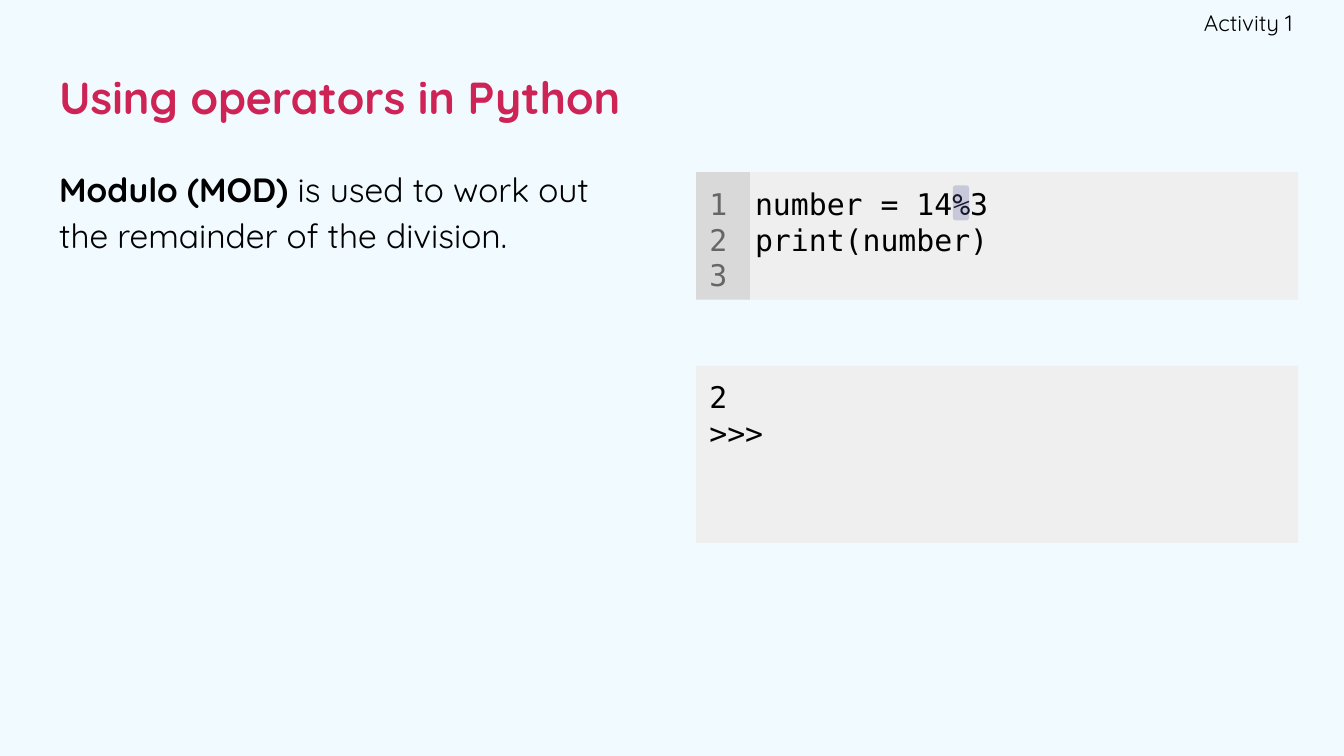
from dataclasses import dataclass

from lxml.etree import SubElement
from pptx import Presentation
from pptx.dml.color import RGBColor
from pptx.enum.shapes import MSO_SHAPE as Shape
from pptx.enum.text import MSO_ANCHOR as Anchor, MSO_AUTO_SIZE as AutoSize, PP_ALIGN as Align
from pptx.oxml.ns import qn
from pptx.util import Inches, Pt


@dataclass(frozen=True)
class Theme:
    page: str = "F1FAFF"
    heading: str = "CD2355"
    ink: str = "000000"
    panel: str = "EFEFEF"
    gutter: str = "D9D9D9"
    line_number: str = "666666"
    marker: str = "5B5BA5"
    marker_alpha: int = 26000
    text_font: str = "Quicksand"
    code_font: str = "DejaVu Sans Mono"
    title_size: int = 24
    body_size: int = 18
    code_size: int = 16
    label_size: int = 12


THEME = Theme()


def apply(target, values):
    for name, value in values.items():
        setattr(target, name, value)


def place(item, box):
    names = ("left", "top", "width", "height")
    apply(item, {name: Inches(value) for name, value in zip(names, box)})


def write(item, lines, font, size, color, anchor=Anchor.TOP, align=Align.LEFT, spacing=1.0, right=0.1):
    frame = item.text_frame
    apply(frame, {
        "word_wrap": True, "auto_size": AutoSize.NONE, "vertical_anchor": anchor,
        "margin_left": Inches(0.1), "margin_top": Inches(0.1),
        "margin_right": Inches(right), "margin_bottom": Inches(0.1),
    })
    for index, spans in enumerate(lines):
        para = frame.add_paragraph() if index else frame.paragraphs[0]
        apply(para, {"alignment": align, "line_spacing": spacing, "space_before": Pt(0)})
        for text, bold in spans:
            span = para.add_run()
            span.text = text
            apply(span.font, {"name": font, "size": Pt(size), "bold": bold})
            span.font.color.rgb = RGBColor.from_string(color)


def add_block(page, box, fill, shape=Shape.RECTANGLE):
    block = page.shapes.add_shape(shape, *map(Inches, box))
    block.shadow.inherit = False
    block.fill.solid()
    block.fill.fore_color.rgb = RGBColor.from_string(fill)
    block.line.fill.background()
    return block


def add_code(page, box, lines, fill=THEME.panel, color=THEME.ink):
    block = add_block(page, box, fill)
    write(block, [[(line, False)] for line in lines], THEME.code_font, THEME.code_size, color)


def add_heading(page, box):
    place(page.shapes.title, box)
    write(page.shapes.title, [[("Using operators in Python", True)]],
          THEME.text_font, THEME.title_size, THEME.heading, Anchor.MIDDLE)


def add_label(page, box):
    label = page.shapes.add_textbox(*map(Inches, box))
    write(label, [[("Activity 1", False)]], THEME.text_font, THEME.label_size,
          THEME.ink, Anchor.MIDDLE, Align.RIGHT, right=0)


def add_explanation(page, box):
    body = page.placeholders[1]
    place(body, box)
    spans = [("Modulo (MOD) ", True), ("is used to work out the remainder of the division.", False)]
    write(body, [spans], THEME.text_font, THEME.body_size, THEME.ink, spacing=1.15)
    for para in body.text_frame.paragraphs:
        properties = para._p.get_or_add_pPr()
        properties.set("marL", "0")
        properties.set("indent", "0")
        SubElement(properties, qn("a:buNone"))


def add_editor(page, box):
    left, top, width, height = box
    inset = 0.34
    add_code(page, (left + inset, top, width - inset, height), ["number = 14%3", "print(number)"])
    add_code(page, (left, top, 0.4, height), ["1", "2", "3"], THEME.gutter, THEME.line_number)
    marker = add_block(page, (left + 1.91, top + 0.1, 0.12, 0.26), THEME.marker, Shape.ROUNDED_RECTANGLE)
    color = next(marker._element.iter(qn("a:srgbClr")))
    SubElement(color, qn("a:alpha")).set("val", str(THEME.marker_alpha))


def add_console(page, box):
    add_code(page, box, ["2", ">>>"])


def main():
    deck = Presentation()
    width = Inches(10)
    apply(deck, {"slide_width": width, "slide_height": width * 9 // 16})
    page = deck.slides.add_slide(deck.slide_layouts[1])
    page.background.fill.solid()
    page.background.fill.fore_color.rgb = RGBColor.from_string(THEME.page)
    add_explanation(page, (0.34, 1.11, 4.48, 4))
    add_heading(page, (0.34, 0.34, 9.32, 0.76))
    add_label(page, (7.48, 0, 2.14, 0.34))
    add_editor(page, (5.18, 1.28, 4.48, 0.95))
    add_console(page, (5.18, 2.72, 4.48, 1.32))
    deck.save("out.pptx")


if __name__ == "__main__":
    main()
